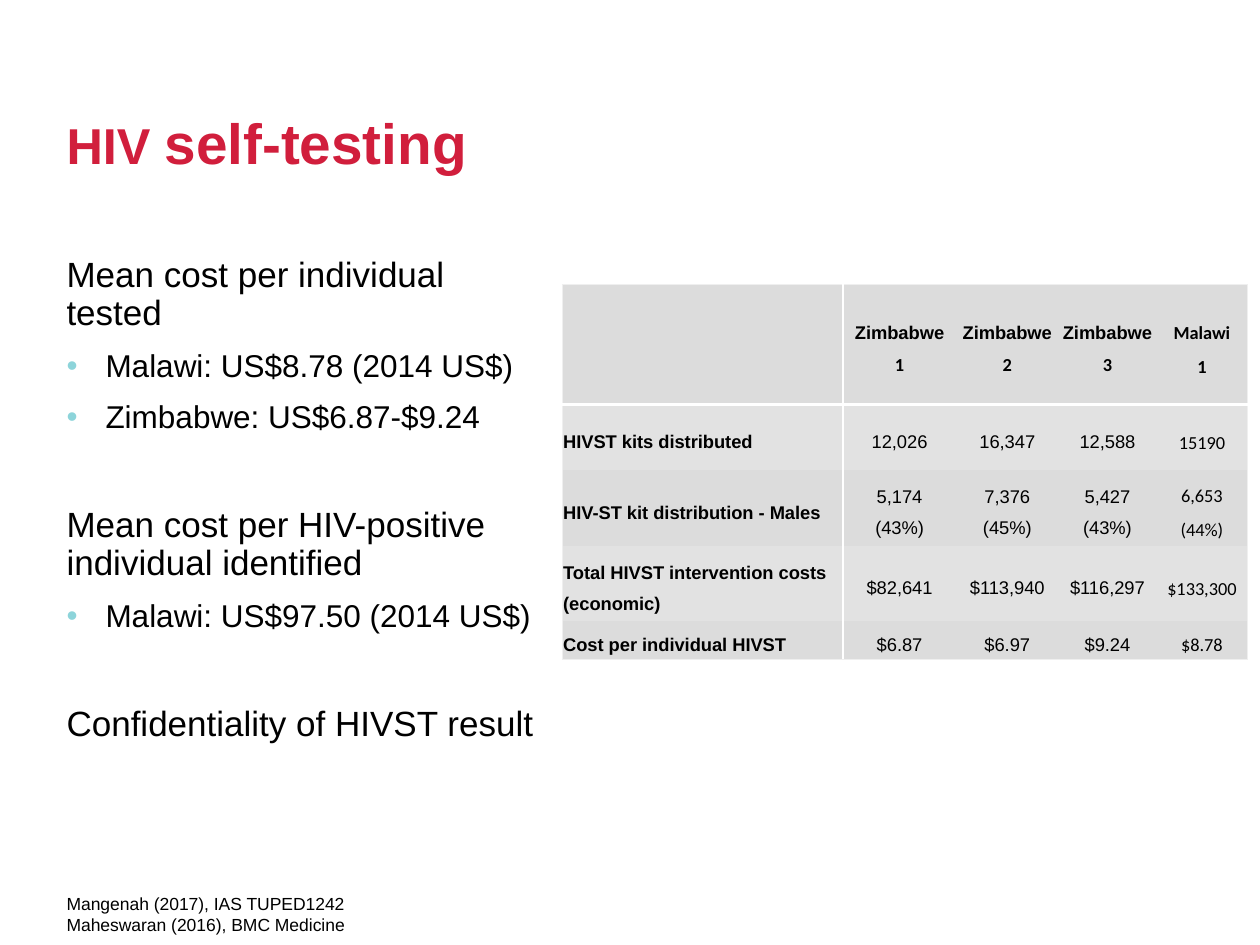
from dataclasses import dataclass
from typing import Optional

from lxml.etree import SubElement
from pptx import Presentation
from pptx.dml.color import RGBColor
from pptx.enum.text import MSO_ANCHOR, MSO_AUTO_SIZE, PP_ALIGN
from pptx.oxml.ns import qn
from pptx.util import Inches, Pt

UNIT = Inches(0.1)
COLUMNS, ROWS = 100, 75

RED = RGBColor(0xD1, 0x1E, 0x3C)
BLACK = RGBColor(0x00, 0x00, 0x00)
WHITE = RGBColor(0xFF, 0xFF, 0xFF)
AQUA = RGBColor(0x8D, 0xD4, 0xDA)
BAND_DARK = RGBColor(0xDC, 0xDC, 0xDC)
BAND_LIGHT = RGBColor(0xE2, 0xE2, 0xE2)
EDGE = RGBColor(0xEF, 0xEF, 0xEF)


@dataclass(frozen=True)
class Area:
    left: float
    top: float
    width: float
    height: float

    def emu(self) -> list[int]:
        """Return the area's grid lengths in slide units."""
        return [int(n * UNIT) for n in (self.left, self.top, self.width, self.height)]


@dataclass(frozen=True)
class Point:
    words: str
    size: float = 20
    bulleted: bool = False
    space_before: float = 10


@dataclass(frozen=True)
class Rule:
    color: RGBColor
    width: float


OUTER = Rule(EDGE, 0.5)
COLUMN_RULES = {0: OUTER, 1: Rule(WHITE, 1), 5: OUTER}
ROW_RULES = {0: OUTER, 1: Rule(WHITE, 1.5), 5: OUTER}
COLUMN_WIDTHS = (22.3, 9, 8.1, 7.8, 7.2)
ROW_HEIGHTS = (9.5, 5.2, 6, 6, 3)
SECTION_GAP = 41

POINTS = (
    Point("Mean cost per individual tested", space_before=0),
    Point("Malawi: US$8.78 (2014 US$)", 18, True),
    Point("Zimbabwe: US$6.87-$9.24", 18, True),
    Point("Mean cost per HIV-positive individual identified", space_before=SECTION_GAP),
    Point("Malawi: US$97.50 (2014 US$)", 18, True),
    Point("Confidentiality of HIVST result", space_before=SECTION_GAP),
)
COSTS = (
    ("", "Zimbabwe\n1", "Zimbabwe\n2", "Zimbabwe\n3", "Malawi\n1"),
    ("HIVST kits distributed", "12,026", "16,347", "12,588", "15190"),
    ("HIV-ST kit distribution - Males", "5,174\n(43%)", "7,376\n(45%)", "5,427 (43%)", "6,653\n(44%)"),
    ("Total HIVST intervention costs (economic)", "$82,641", "$113,940", "$116,297", "$133,300"),
    ("Cost per individual HIVST", "$6.87", "$6.97", "$9.24", "$8.78"),
)
SOURCES = "Mangenah (2017), IAS TUPED1242\nMaheswaran (2016), BMC Medicine"


def style(run, size: float, color: RGBColor = BLACK, bold: bool = False, face: str = "Arial") -> None:
    """Set the font of a run."""
    run.font.name = face
    run.font.size = Pt(size)
    run.font.bold = bold
    run.font.color.rgb = color


def add_frame(slide, area: Area, wrap: bool = True):
    """Add a text box and return its text frame."""
    frame = slide.shapes.add_textbox(*area.emu()).text_frame
    frame.word_wrap = wrap
    return frame


def add_title(slide) -> None:
    """Add the two-size slide title."""
    frame = add_frame(slide, Area(4.3, 5.9, 43, 8.6))
    frame.vertical_anchor = MSO_ANCHOR.BOTTOM
    heading = frame.paragraphs[0]
    heading.line_spacing = 0.9
    for words, size in (("HIV ", 28.8), ("self-testing", 32.4)):
        run = heading.add_run()
        run.text = words
        style(run, size, RED, True)


def add_bullet(paragraph) -> None:
    """Give a paragraph a hanging aqua bullet."""
    properties = paragraph._p.get_or_add_pPr()
    properties.set("marL", str(Inches(0.31)))
    properties.set("indent", str(-Inches(0.31)))
    bullet_color = SubElement(properties, qn("a:buClr"))
    SubElement(bullet_color, qn("a:srgbClr"), val=str(AQUA))
    SubElement(properties, qn("a:buFont"), typeface="Arial")
    SubElement(properties, qn("a:buChar"), char="•")


def add_points(slide) -> None:
    """Add the cost findings."""
    frame = add_frame(slide, Area(4.3, 19.9, 39.4, 45.2))
    frame.text = "\n".join(point.words for point in POINTS)
    for point, paragraph in zip(POINTS, frame.paragraphs):
        if point.bulleted:
            add_bullet(paragraph)
        paragraph.line_spacing = 0.9
        paragraph.space_before = Pt(point.space_before)
        style(paragraph.runs[0], point.size)


def add_border(cell, tag: str, position: int, rule: Optional[Rule]) -> None:
    """Draw one cell edge, or clear it when there is no rule."""
    properties = cell._tc.get_or_add_tcPr()
    line = SubElement(properties, qn(tag))
    properties.insert(position, line)
    if rule is None:
        SubElement(line, qn("a:noFill"))
        return
    line.set("w", str(Pt(rule.width)))
    fill = SubElement(line, qn("a:solidFill"))
    SubElement(fill, qn("a:srgbClr"), val=str(rule.color))


def fill_cell(cell, words: str, row: int, column: int) -> None:
    """Write and format one table cell."""
    cell.fill.solid()
    cell.fill.fore_color.rgb = BAND_LIGHT if row % 2 else BAND_DARK
    cell.margin_left = cell.margin_right = Inches(0.01) if column < 2 else 0
    cell.margin_top = cell.margin_bottom = 0
    cell.vertical_anchor = MSO_ANCHOR.MIDDLE
    cell.text_frame.text = words
    for line, paragraph in enumerate(cell.text_frame.paragraphs):
        paragraph.line_spacing = 1.5
        paragraph.alignment = PP_ALIGN.CENTER if column else PP_ALIGN.LEFT
        calibri = column == 4 or (row == 0 and line == 1)
        for run in paragraph.runs:
            style(run, 10.5, bold=row == 0 or column == 0, face="Calibri" if calibri else "Arial")
    edges = (
        ("a:lnL", COLUMN_RULES.get(column)),
        ("a:lnR", COLUMN_RULES.get(column + 1)),
        ("a:lnT", ROW_RULES.get(row)),
        ("a:lnB", ROW_RULES.get(row + 1)),
    )
    for position, (tag, rule) in enumerate(edges):
        add_border(cell, tag, position, rule)


def add_costs(slide) -> None:
    """Add the table of distribution and costs."""
    area = Area(44.6, 22.6, sum(COLUMN_WIDTHS), sum(ROW_HEIGHTS))
    table = slide.shapes.add_table(len(ROW_HEIGHTS), len(COLUMN_WIDTHS), *area.emu()).table
    table.horz_banding = False
    for column, width in zip(table.columns, COLUMN_WIDTHS):
        column.width = int(width * UNIT)
    for row, height in zip(table.rows, ROW_HEIGHTS):
        row.height = int(height * UNIT)
    for row, entries in enumerate(COSTS):
        for column, words in enumerate(entries):
            fill_cell(table.cell(row, column), words, row, column)


def add_sources(slide) -> None:
    """Add the references at the foot of the slide."""
    frame = add_frame(slide, Area(4.3, 70.4, 24.3, 4.4), wrap=False)
    frame.auto_size = MSO_AUTO_SIZE.SHAPE_TO_FIT_TEXT
    frame.text = SOURCES
    for paragraph in frame.paragraphs:
        style(paragraph.runs[0], 10)


def main() -> None:
    """Build and save the slide."""
    deck = Presentation()
    deck.slide_width, deck.slide_height = COLUMNS * UNIT, ROWS * UNIT
    slide = deck.slides.add_slide(deck.slide_layouts[6])
    add_title(slide)
    add_costs(slide)
    add_points(slide)
    add_sources(slide)
    deck.save("out.pptx")


if __name__ == "__main__":
    main()
